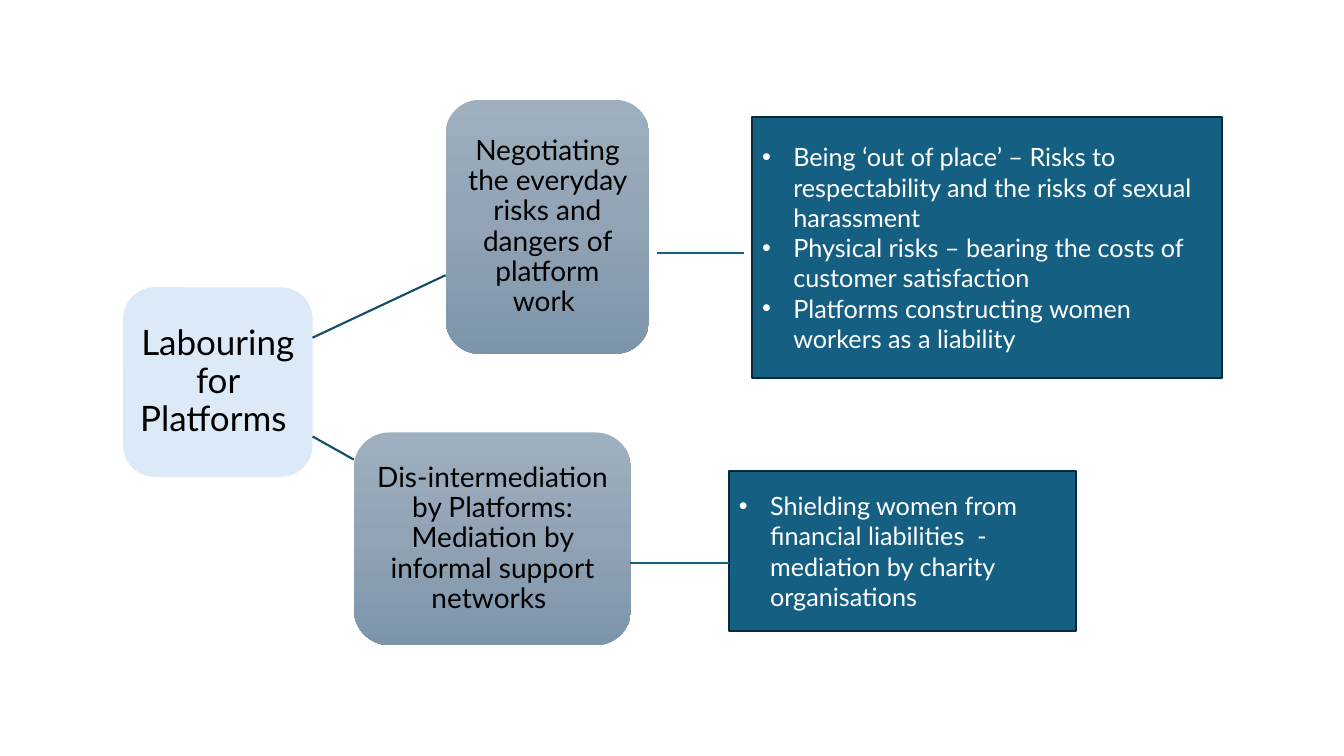
from copy import deepcopy

from lxml import etree
from pptx import Presentation
from pptx.dml.color import RGBColor
from pptx.enum.shapes import MSO_CONNECTOR, MSO_SHAPE
from pptx.enum.text import MSO_ANCHOR, PP_ALIGN
from pptx.oxml.ns import qn
from pptx.util import Inches, Pt

RECTANGLE, ROUNDED = MSO_SHAPE.RECTANGLE, MSO_SHAPE.ROUNDED_RECTANGLE
STRAIGHT = MSO_CONNECTOR.STRAIGHT
MIDDLE = MSO_ANCHOR.MIDDLE
CENTER, LEFT = PP_ALIGN.CENTER, PP_ALIGN.LEFT

FONT = "Lato"
THEME_FILL = ["9EAFBF", "91A3B4", "7C95AB"]
BRANCH, LINK, DETAIL_EDGE = "114D68", "156082", "092A39"
BULLET_INDENT = 0.31

TOPICS = [
    ("Labouring for Platforms ", (1.22, 2.85, 1.88, 1.88), ["DCEAF7"], 25, 0.07),
    ("Negotiating the everyday risks and dangers of platform work ",
     (4.42, 0.99, 2.02, 2.52), THEME_FILL, 20, 0.06),
    ("Dis-intermediation by Platforms: Mediation by informal support networks ",
     (3.51, 4.29, 2.75, 2.11), THEME_FILL, 20, 0.06),
]
DETAILS = [
    ((7.46, 1.16, 4.66, 2.59), [
        "Being ‘out of place’ – Risks to respectability and the risks of sexual harassment",
        "Physical risks – bearing the costs of customer satisfaction",
        "Platforms constructing women workers as a liability",
    ]),
    ((7.23, 4.67, 3.44, 1.59), [
        "Shielding women from financial liabilities  - mediation by charity organisations",
    ]),
]
CONNECTIONS = [
    ((3.1, 3.35), (4.42, 2.73), BRANCH),
    ((3.1, 4.33), (3.51, 4.56), BRANCH),
    ((7.38, 2.51), (6.52, 2.51), LINK),
    ((7.23, 5.59), (6.25, 5.59), LINK),
]


def color(value):
    return RGBColor.from_string(value)


def fill_box(box, colors):
    if len(colors) == 1:
        box.fill.solid()
        box.fill.fore_color.rgb = color(colors[0])
        return
    box.fill.gradient()
    box.fill.gradient_angle = 270
    stop_list = box._element.spPr.find(".//" + qn("a:gsLst"))
    stop_list.insert(1, deepcopy(stop_list[0]))
    for index, (stop, value) in enumerate(zip(box.fill.gradient_stops, colors)):
        stop.color.rgb = color(value)
        stop.position = index / (len(colors) - 1)


def add_box(slide, kind, place, colors):
    box = slide.shapes.add_shape(kind, *map(Inches, place))
    box.shadow.inherit = False
    fill_box(box, colors)
    box.line.fill.background()
    box.text_frame.word_wrap = True
    box.text_frame.vertical_anchor = MIDDLE
    return box


def write(paragraph, text, size, value, alignment):
    paragraph.text = text
    paragraph.alignment = alignment
    paragraph.font.name = FONT
    paragraph.font.size = Pt(size)
    paragraph.font.color.rgb = color(value)


def add_topic(slide, text, place, colors, size, inset):
    frame = add_box(slide, ROUNDED, place, colors).text_frame
    frame.margin_left = frame.margin_right = Inches(inset)
    frame.margin_top = frame.margin_bottom = Inches(inset)
    paragraph = frame.paragraphs[0]
    write(paragraph, text, size, "000000", CENTER)
    paragraph.line_spacing = 0.9


def add_detail(slide, place, points):
    box = add_box(slide, RECTANGLE, place, [LINK])
    box.line.color.rgb = color(DETAIL_EDGE)
    box.line.width = Pt(1.5)
    frame = box.text_frame
    for index, point in enumerate(points):
        paragraph = frame.add_paragraph() if index else frame.paragraphs[0]
        write(paragraph, point, 18, "FFFFFF", LEFT)
        properties = paragraph._p.get_or_add_pPr()
        properties.set("marL", str(Inches(BULLET_INDENT)))
        properties.set("indent", str(-Inches(BULLET_INDENT)))
        bullet_font = etree.Element(qn("a:buFont"), typeface="Arial")
        bullet = etree.Element(qn("a:buChar"), char="•")
        properties.find(qn("a:defRPr")).addprevious(bullet_font)
        bullet_font.addnext(bullet)


def add_connection(slide, start, end, value):
    connection = slide.shapes.add_connector(STRAIGHT, *map(Inches, start + end))
    connection.line.color.rgb = color(value)
    connection.line.width = Pt(1.5)
    etree.SubElement(connection._element.spPr, qn("a:effectLst"))


def main():
    deck = Presentation()
    deck.slide_width, deck.slide_height = Inches(13.33), Inches(7.5)
    slide = deck.slides.add_slide(deck.slide_layouts[6])
    for topic in TOPICS:
        add_topic(slide, *topic)
    for detail in DETAILS:
        add_detail(slide, *detail)
    for connection in CONNECTIONS:
        add_connection(slide, *connection)
    deck.save("out.pptx")


if __name__ == "__main__":
    main()
